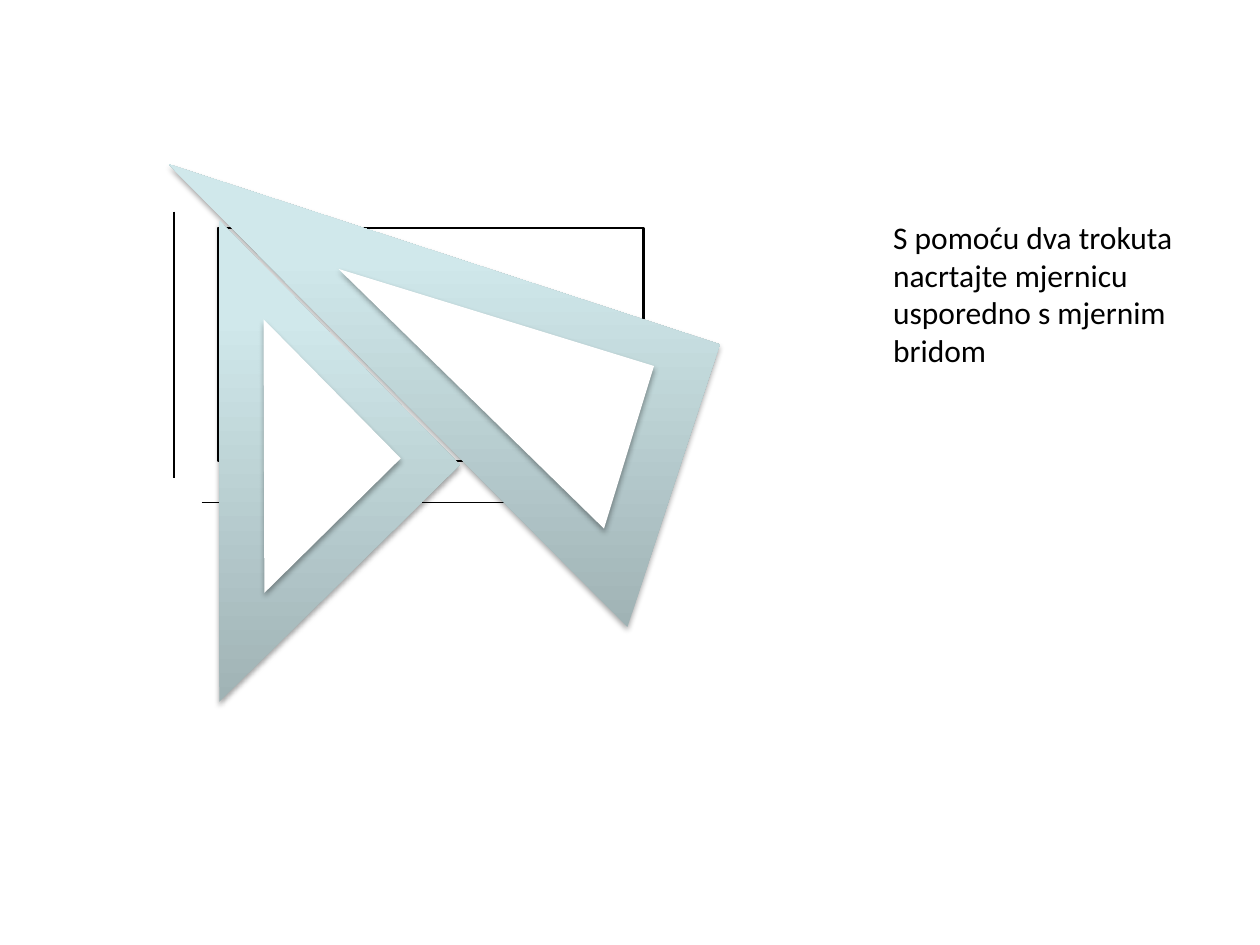
from lxml import etree
from pptx import Presentation
from pptx.dml.color import RGBColor
from pptx.enum.shapes import MSO_CONNECTOR as CONNECTOR, MSO_SHAPE as SHAPE
from pptx.enum.text import MSO_AUTO_SIZE as AUTO_SIZE
from pptx.oxml import parse_xml
from pptx.oxml.ns import nsdecls, qn
from pptx.util import Inches, Pt

BLACK, WHITE = "000000", "FFFFFF"
PLASTIC = [(0, "A0B3B5"), (80, "D0E8EB"), (100, "D1EAEC")]


def color(hex_code):
    return RGBColor.from_string(hex_code)


def set_line(line, width):
    line.color.rgb = color(BLACK)
    line.width = Pt(width)


def add_shadow(shape):
    """Cast a soft shadow straight down, whatever the shape's rotation."""
    shape.shadow.inherit = False
    effects = shape._element.spPr.find(qn("a:effectLst"))
    effects.append(parse_xml(
        f'<a:outerShdw {nsdecls("a")} blurRad="{Pt(3.1)}" dist="{Pt(1.8)}" '
        'dir="5400000" rotWithShape="0"><a:srgbClr val="000000">'
        '<a:alpha val="35000"/></a:srgbClr></a:outerShdw>'))


def fill_plastic(shape):
    """Shade from dark at the bottom of the page to light at the top."""
    shape.fill.gradient()
    shape.fill.gradient_angle = 90
    gradient = shape._element.spPr.find(qn("a:gradFill"))
    gradient.set("rotWithShape", "0")
    stops = gradient.find(qn("a:gsLst"))
    for stop in list(stops):
        stops.remove(stop)
    for percent, hex_code in PLASTIC:
        stop = etree.SubElement(stops, qn("a:gs"), pos=str(percent * 1000))
        etree.SubElement(stop, qn("a:srgbClr"), val=hex_code)


def add_triangle(group, left, top, width, height, rotation):
    triangle = group.shapes.add_shape(
        SHAPE.RIGHT_TRIANGLE, Inches(left), Inches(top), Inches(width), Inches(height))
    triangle.rotation = rotation
    triangle.line.fill.background()
    add_shadow(triangle)
    return triangle


def add_set_square(slide, box, rotation, window, window_rotation):
    """Add a drafting triangle; window is its opening, offset from the box."""
    left, top, width, height = box
    dx, dy, window_width, window_height = window
    group = slide.shapes.add_group_shape()
    fill_plastic(add_triangle(group, left, top, width, height, rotation))
    opening = add_triangle(group, left + dx, top + dy,
                           window_width, window_height, window_rotation)
    opening.fill.solid()
    opening.fill.fore_color.rgb = color(WHITE)


def add_measured_rectangle(slide, left, top, width, height):
    """Add a rectangle with a dimension line below it and one at its left."""
    rectangle = slide.shapes.add_shape(
        SHAPE.RECTANGLE, Inches(left), Inches(top), Inches(width), Inches(height))
    rectangle.shadow.inherit = False
    rectangle.fill.background()
    set_line(rectangle.line, 1.5)

    below, beside = top + height + 0.33, left - 0.35
    for ends in [(left - 0.13, below, left + width + 0.13, below),
                 (beside, top - 0.13, beside, top + height + 0.13)]:
        dimension = slide.shapes.add_connector(CONNECTOR.STRAIGHT, *map(Inches, ends))
        set_line(dimension.line, 0.75)
        etree.SubElement(dimension._element.spPr, qn("a:effectLst"))


def add_instruction(slide, left, top, width, height):
    frame = slide.shapes.add_textbox(
        Inches(left), Inches(top), Inches(width), Inches(height)).text_frame
    frame.word_wrap = True
    frame.auto_size = AUTO_SIZE.SHAPE_TO_FIT_TEXT
    paragraph = frame.paragraphs[0]
    paragraph.text = "S pomoću dva trokuta nacrtajte mjernicu usporedno s mjernim bridom"
    paragraph.font.name = "Calibri"
    paragraph.font.size = Pt(18)
    paragraph.font.color.rgb = color(BLACK)


def main():
    deck = Presentation()
    deck.slide_width, deck.slide_height = Inches(10), Inches(7.5)
    slide = deck.slides.add_slide(deck.slide_layouts[6])
    add_measured_rectangle(slide, 1.73, 1.81, 3.38, 1.85)
    add_set_square(slide, (0.86, 1.96, 4.6, 2.36), 198.1,
                   (1.57, 0.53, 2.62, 1.35), 197.1)
    add_set_square(slide, (0.38, 2.32, 2.72, 2.68), 225.4,
                   (0.94, 0.54, 1.55, 1.52), 225.4)
    add_instruction(slide, 6.99, 1.68, 2.73, 1.31)
    deck.save("out.pptx")


if __name__ == "__main__":
    main()
